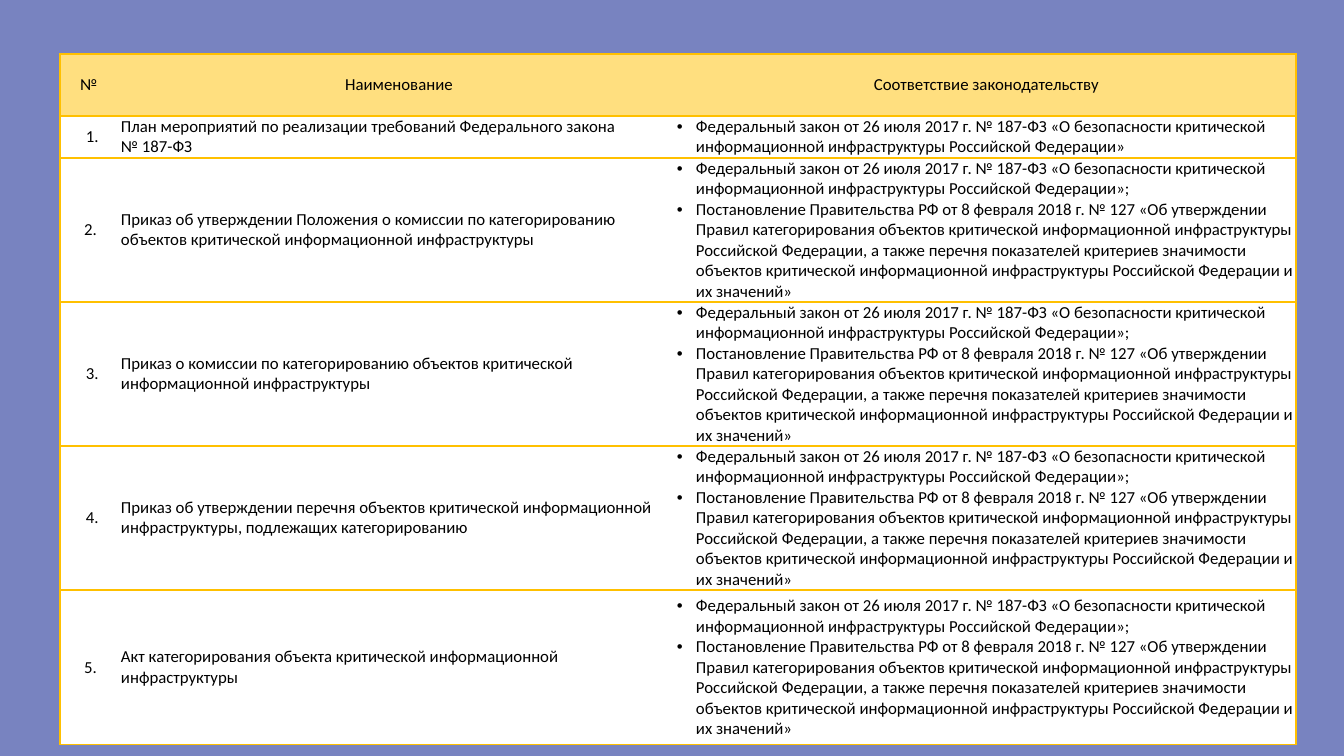
from lxml import etree
from pptx import Presentation
from pptx.dml.color import RGBColor
from pptx.enum.text import MSO_ANCHOR, PP_ALIGN
from pptx.oxml.ns import qn
from pptx.util import Emu, Pt

CENTER = PP_ALIGN.CENTER
LEFT = PP_ALIGN.LEFT
MIDDLE = MSO_ANCHOR.MIDDLE
PX = 914400 / 100.8
COLORS = {
    "background": "7883C0",
    "header": "FFDF7F",
    "body": "FFFFFF",
    "border": "FFC000",
    "text": "000000",
}

LAW = (
    "Федеральный закон от 26 июля 2017 г. № 187-ФЗ «О безопасности критической "
    "информационной инфраструктуры Российской Федерации»"
)
DECREE = (
    "Постановление Правительства РФ от 8 февраля 2018 г. № 127 «Об утверждении "
    "Правил категорирования объектов критической информационной инфраструктуры "
    "Российской Федерации, а также перечня показателей критериев значимости "
    "объектов критической информационной инфраструктуры Российской Федерации "
    "и их значений»"
)
BOTH_ACTS = [LAW + ";", DECREE]
HEADER = ["№ ", "Наименование", "Соответствие законодательству"]
DOCUMENTS = [
    (" 1.", ["План мероприятий по реализации требований Федерального закона",
             "№ 187-ФЗ"], [LAW]),
    ("2.", ["Приказ об утверждении Положения о комиссии по категорированию "
            "объектов критической информационной инфраструктуры"], BOTH_ACTS),
    (" 3.", ["Приказ о комиссии по категорированию объектов критической "
             "информационной инфраструктуры"], BOTH_ACTS),
    (" 4.", ["Приказ об утверждении перечня объектов критической информационной "
             "инфраструктуры, подлежащих категорированию"], BOTH_ACTS),
    ("5.", ["Акт категорирования объекта критической информационной "
            "инфраструктуры"], BOTH_ACTS),
]
COL_WIDTHS = [61, 556, 619]
ROW_HEIGHTS = [62, 42, 144, 144, 144, 155]


def px(n):
    return Emu(round(n * PX))


def rgb(name):
    return RGBColor.from_string(COLORS[name])


class SlideBuilder:
    font = "Calibri"
    size = Pt(12)
    line = Pt(1)
    indent = 19

    def __init__(self, prs):
        self.slide = prs.slides.add_slide(prs.slide_layouts[6])

    def background(self, color):
        fill = self.slide.background.fill
        fill.solid()
        fill.fore_color.rgb = rgb(color)

    def table(self, x, y, widths, heights):
        frame = self.slide.shapes.add_table(
            len(heights), len(widths), px(x), px(y), px(sum(widths)), px(sum(heights)))
        table = frame.table
        table.first_row = table.horz_banding = False
        for col, w in zip(table.columns, widths):
            col.width = px(w)
        for row, h in zip(table.rows, heights):
            row.height = px(h)
        return table

    def cell(self, cell, texts, fill, edges, align=LEFT, bullets=False):
        cell.margin_left = cell.margin_right = cell.margin_top = cell.margin_bottom = 0
        cell.vertical_anchor = MIDDLE
        cell.fill.solid()
        cell.fill.fore_color.rgb = rgb(fill)
        self.borders(cell, edges)
        tf = cell.text_frame
        for i, text in enumerate(texts):
            p = tf.add_paragraph() if i else tf.paragraphs[0]
            p.alignment = align
            p.font.name = self.font
            p.font.size = self.size
            p.font.color.rgb = rgb("text")
            p.add_run().text = text
            if bullets:
                self.bullet(p)

    def borders(self, cell, edges):
        tcPr = cell._tc.get_or_add_tcPr()
        for i, edge in enumerate("LRTB"):
            ln = etree.Element(qn(f"a:ln{edge}"), w=str(self.line))
            if edge in edges:
                fill = etree.SubElement(ln, qn("a:solidFill"))
                etree.SubElement(fill, qn("a:srgbClr"), val=COLORS["border"])
            else:
                etree.SubElement(ln, qn("a:noFill"))
            tcPr.insert(i, ln)

    def bullet(self, p):
        pPr = p._p.get_or_add_pPr()
        pPr.set("marL", str(px(self.indent)))
        pPr.set("indent", str(-px(self.indent)))
        font = etree.Element(qn("a:buFont"), typeface="Arial")
        char = etree.Element(qn("a:buChar"), char="•")
        pPr.insert(0, font)
        pPr.insert(1, char)


def main():
    prs = Presentation()
    prs.slide_width = px(1344)
    prs.slide_height = px(756)
    s = SlideBuilder(prs)
    s.background("background")
    table = s.table(60, 54, COL_WIDTHS, ROW_HEIGHTS)
    column_edges = ["LTB", "TB", "RTB"]
    for c, title in enumerate(HEADER):
        s.cell(table.cell(0, c), [title], "header", column_edges[c], CENTER)
    for r, (number, names, acts) in enumerate(DOCUMENTS, 1):
        s.cell(table.cell(r, 0), [number], "body", column_edges[0], CENTER)
        s.cell(table.cell(r, 1), names, "body", column_edges[1])
        s.cell(table.cell(r, 2), acts, "body", column_edges[2], bullets=True)
    prs.save("out.pptx")


if __name__ == "__main__":
    main()
